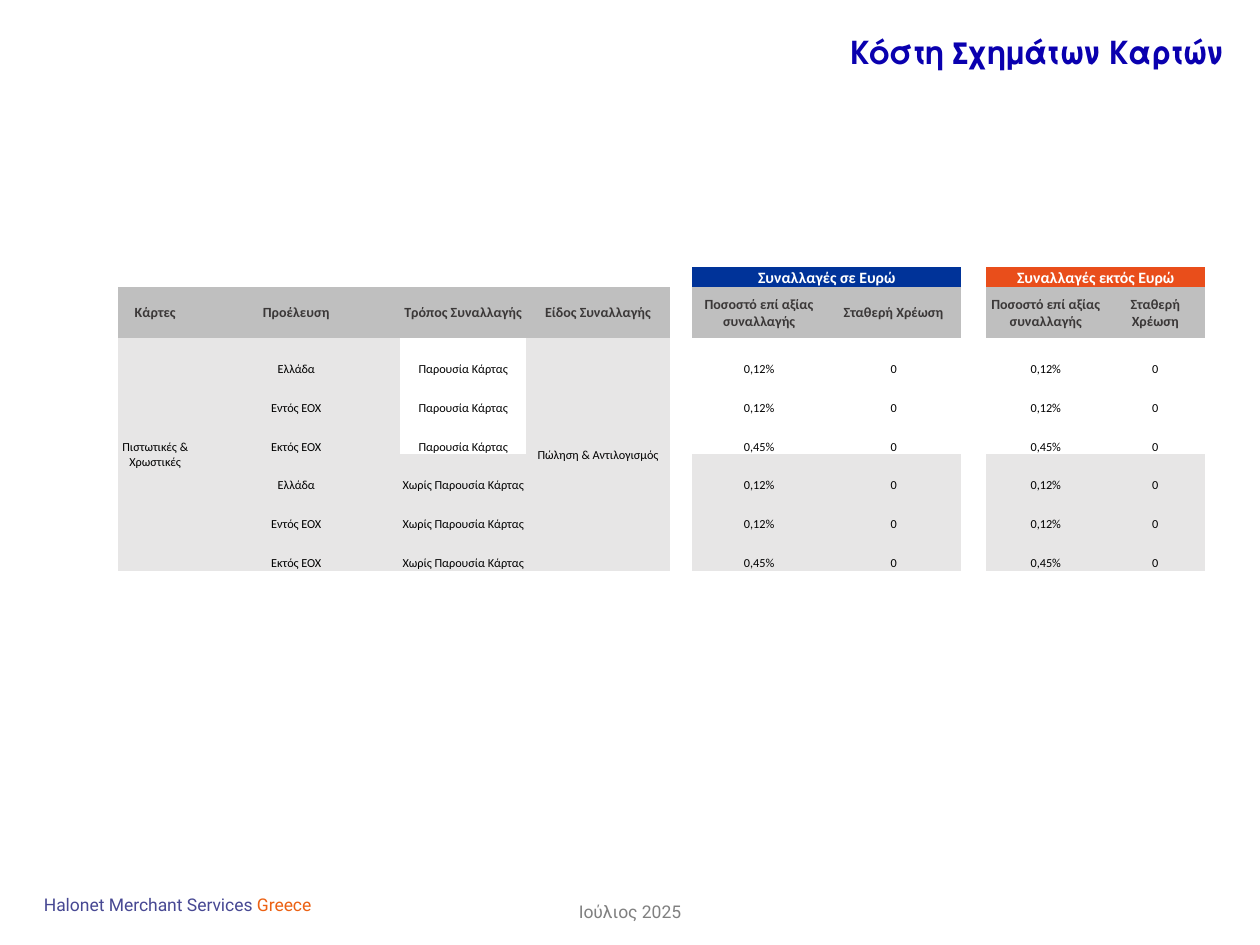
from lxml.etree import SubElement
from pptx import Presentation
from pptx.dml.color import RGBColor
from pptx.enum.text import MSO_ANCHOR as Anchor, PP_ALIGN as Align
from pptx.oxml.ns import qn
from pptx.util import Pt

COLORS = {
    "title": "0A00AF", "company": "474893", "country": "EC6113", "date": "808080",
    "euro": "003399", "non_euro": "E94E1B", "header": "BFBFBF", "header_text": "3B3838",
    "shade": "E7E6E6", "white": "FFFFFF", "black": "000000",
}

TITLE = "Κόστη Σχημάτων Καρτών"
FOOTER = [("Halonet Merchant Services ", "company"), ("Greece", "country")]
DATE = "Ιούλιος 2025"

FEE_HEADERS = ["Ποσοστό επί αξίας συναλλαγής", "Σταθερή Χρέωση"]
CARD_HEADERS = ["Κάρτες", "Προέλευση", "Τρόπος Συναλλαγής", "Είδος Συναλλαγής"]
CARDS = "Πιστωτικές & Χρωστικές"
KIND = "Πώληση & Αντιλογισμός"
MODES = [("Παρουσία Κάρτας", "white"), ("Χωρίς Παρουσία Κάρτας", "shade")]
ORIGINS = [("Ελλάδα", "0,12%"), ("Εντός ΕΟΧ", "0,12%"), ("Εκτός ΕΟΧ", "0,45%")]
FIXED_FEE = "0"
# first column of each fee block, its heading and fill
FEE_BLOCKS = [(5, "Συναλλαγές σε Ευρώ", "euro"), (8, "Συναλλαγές εκτός Ευρώ", "non_euro")]
GAP_COLUMNS = [4, 7]

COLUMN_WIDTHS = [42.4, 118.8, 72, 82.2, 12.7, 76.5, 77.2, 14.3, 68.2, 57]
ROW_HEIGHTS = [11.6, 29] + [22.2] * (len(MODES) * len(ORIGINS))
TABLE_LEFT, TABLE_TOP = 67.5, 152.5
NO_STYLE_NO_GRID = "{2D5ABB26-0587-4C30-8999-92F81FD0307C}"


def rgb(name):
    return RGBColor.from_string(COLORS[name])


def format_font(font, name, size, color, bold=False):
    font.name, font.size, font.bold = name, Pt(size), bold
    font.color.rgb = rgb(color)


def add_text(slide, box, runs, font_name, size, bold=False, align=Align.LEFT):
    shape = slide.shapes.add_textbox(*(Pt(length) for length in box))
    frame = shape.text_frame
    frame.word_wrap = True
    paragraph = frame.paragraphs[0]
    paragraph.alignment = align
    for text, color in runs:
        run = paragraph.add_run()
        run.text = text
        format_font(run.font, font_name, size, color, bold)
    return frame


def fill_cell(cell, text, fill, size=7, color="black", bold=False, anchor=Anchor.MIDDLE):
    cell.fill.solid()
    cell.fill.fore_color.rgb = rgb(fill)
    cell.vertical_anchor = anchor
    if text:
        cell.text_frame.text = text
        paragraph = cell.text_frame.paragraphs[0]
        paragraph.alignment = Align.CENTER
        format_font(paragraph.runs[0].font, "Calibri", size, color, bold)


def prepare_cell(cell):
    """Tight margins, and a small empty line so that blank cells keep rows low."""
    cell.margin_left = cell.margin_right = cell.margin_top = Pt(0.7)
    cell.margin_bottom = 0
    cell.fill.background()
    SubElement(cell.text_frame.paragraphs[0]._p, qn("a:endParaRPr")).set("sz", "700")


def add_fee_table(slide):
    frame = slide.shapes.add_table(
        len(ROW_HEIGHTS), len(COLUMN_WIDTHS), Pt(TABLE_LEFT), Pt(TABLE_TOP),
        Pt(sum(COLUMN_WIDTHS)), Pt(sum(ROW_HEIGHTS)))
    table = frame.table
    table.first_row = table.horz_banding = False
    table._tbl.tblPr.find(qn("a:tableStyleId")).text = NO_STYLE_NO_GRID
    for column, width in zip(table.columns, COLUMN_WIDTHS):
        column.width = Pt(width)
    for row, height in zip(table.rows, ROW_HEIGHTS):
        row.height = Pt(height)
    for cell in table.iter_cells():
        prepare_cell(cell)

    last_row = len(ROW_HEIGHTS) - 1
    for column, text in [(0, CARDS), (3, KIND)]:
        table.cell(2, column).merge(table.cell(last_row, column))
        fill_cell(table.cell(2, column), text, "shade")
    for row in range(1, last_row + 1):
        for column in GAP_COLUMNS:
            fill_cell(table.cell(row, column), "", "white")

    headers = list(enumerate(CARD_HEADERS))
    for first, heading, fill in FEE_BLOCKS:
        table.cell(0, first).merge(table.cell(0, first + 1))
        fill_cell(table.cell(0, first), heading, fill, 9, "white", True)
        headers += enumerate(FEE_HEADERS, first)
    for column, text in headers:
        fill_cell(table.cell(1, column), text, "header", 8, "header_text", True)

    lines = [(mode, fill, origin, rate) for mode, fill in MODES for origin, rate in ORIGINS]
    for row, (mode, fill, origin, rate) in enumerate(lines, 2):
        values = [(1, origin, "shade"), (2, mode, fill)]
        for first, _, _ in FEE_BLOCKS:
            values += [(first, rate, fill), (first + 1, FIXED_FEE, fill)]
        for column, text, cell_fill in values:
            fill_cell(table.cell(row, column), text, cell_fill, anchor=Anchor.BOTTOM)


def main():
    presentation = Presentation()
    presentation.slide_width, presentation.slide_height = Pt(720), Pt(540)
    slide = presentation.slides.add_slide(presentation.slide_layouts[6])

    add_text(slide, (255.6, 511.2, 208.8, 19.4), [(DATE, "date")], "Roboto", 10,
             align=Align.CENTER)
    add_text(slide, (18, 507.6, 360, 19.4), FOOTER, "Roboto", 10)
    title = add_text(slide, (478.8, 20.2, 241.2, 30.2), [(TITLE, "title")],
                     "TeX Gyre Adventor", 18, bold=True)
    title.margin_top = Pt(1)
    title.paragraphs[0].line_spacing = 0.9
    add_fee_table(slide)
    presentation.save("out.pptx")


if __name__ == "__main__":
    main()
